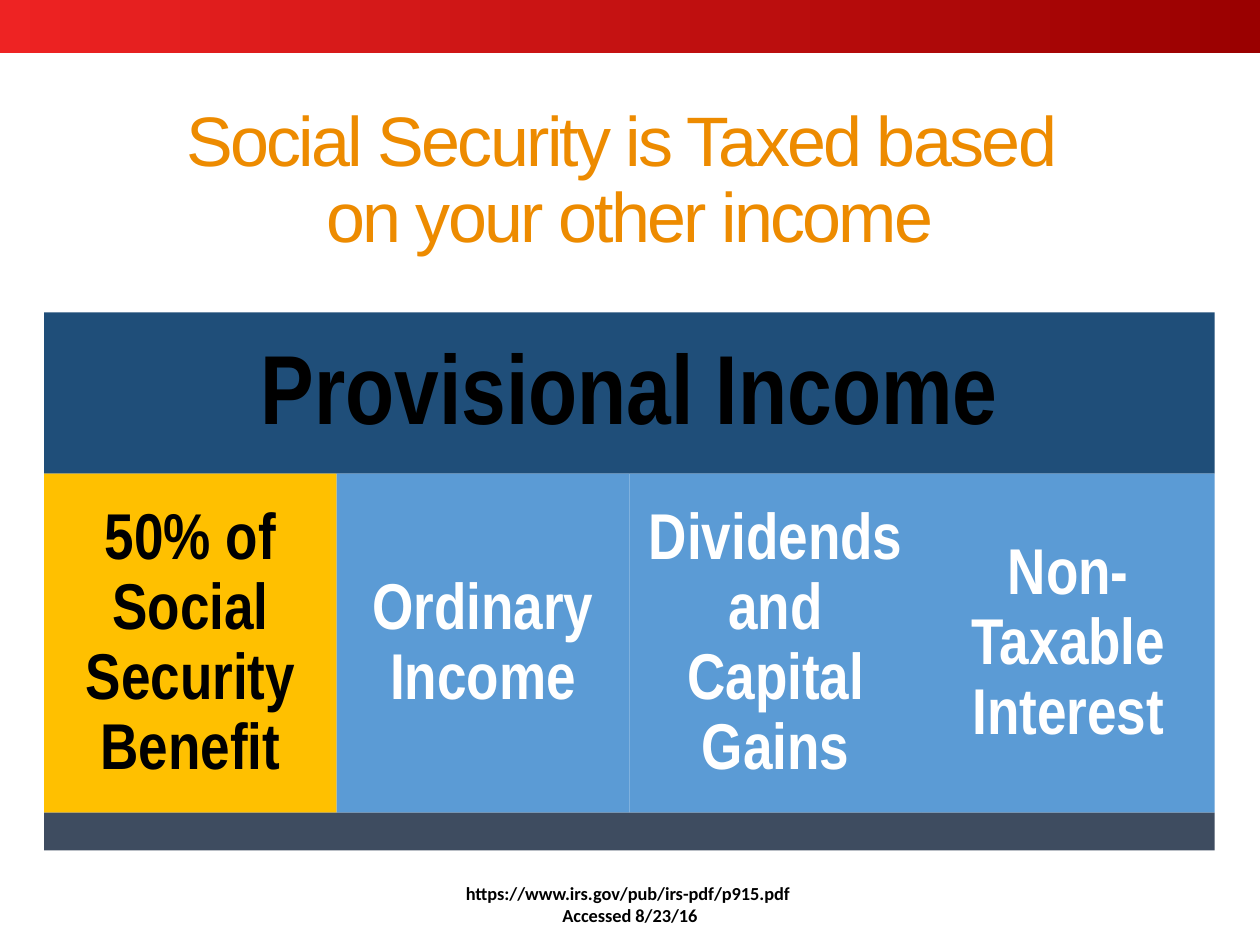
from dataclasses import dataclass

from pptx import Presentation
from pptx.dml.color import RGBColor
from pptx.enum.shapes import MSO_SHAPE
from pptx.enum.text import MSO_ANCHOR, PP_ALIGN
from pptx.util import Inches, Pt

ORANGE = RGBColor(0xED, 0x8B, 0x00)
RED = RGBColor(0xEE, 0x23, 0x23)
DARK_RED = RGBColor(0x9A, 0x00, 0x00)
NAVY = RGBColor(0x1F, 0x4E, 0x79)
GOLD = RGBColor(0xFF, 0xC0, 0x00)
BLUE = RGBColor(0x5B, 0x9B, 0xD5)
SLATE = RGBColor(0x3E, 0x4C, 0x60)
BLACK = RGBColor(0, 0, 0)
WHITE = RGBColor(0xFF, 0xFF, 0xFF)

LEFT, WIDTH = 0.35, 9.29
HEADER_TOP, COLUMN_TOP, FOOTER_TOP = 2.48, 3.76, 6.45
FOOTER_HEIGHT = 0.3


@dataclass
class Block:
    left: float
    top: float
    width: float
    height: float
    fill: RGBColor
    text: str = ""
    size: float = 37
    color: RGBColor = WHITE
    inset: float = 0.15


def format_text(frame, font: str, size: float, color: RGBColor, bold: bool,
                line_spacing: float = 1.0) -> None:
    for para in frame.paragraphs:
        para.alignment = PP_ALIGN.CENTER
        para.line_spacing = line_spacing
        for span in para.runs:
            span.font.name = font
            span.font.size = Pt(size)
            span.font.bold = bold
            span.font.color.rgb = color


def add_rectangle(page, left: float, top: float, width: float, height: float):
    box = page.shapes.add_shape(MSO_SHAPE.RECTANGLE, Inches(left), Inches(top),
                                Inches(width), Inches(height))
    box.shadow.inherit = False
    box.line.fill.background()
    return box


def draw_block(page, block: Block) -> None:
    box = add_rectangle(page, block.left, block.top, block.width, block.height)
    box.fill.solid()
    box.fill.fore_color.rgb = block.fill
    if not block.text:
        return
    frame = box.text_frame
    frame.word_wrap = True
    frame.vertical_anchor = MSO_ANCHOR.MIDDLE
    frame.margin_left = frame.margin_right = Inches(block.inset)
    frame.margin_top = frame.margin_bottom = Inches(block.inset)
    frame.text = block.text
    format_text(frame, "Arial Narrow", block.size, block.color, True, 0.9)


def draw_banner(page) -> None:
    banner = add_rectangle(page, 0, 0, 10, 0.42)
    banner.fill.gradient()
    banner.fill.gradient_angle = 0
    for stop, color in zip(banner.fill.gradient_stops, (RED, DARK_RED)):
        stop.color.rgb = color


def draw_title(page) -> None:
    title = page.shapes.title
    title.left, title.top = Inches(0), Inches(0.72)
    title.width, title.height = Inches(10), Inches(1.45)
    frame = title.text_frame
    frame.word_wrap = True
    frame.vertical_anchor = MSO_ANCHOR.MIDDLE
    frame.text = "Social Security is Taxed based \von your other income"
    format_text(frame, "Arial", 40, ORANGE, False, 0.9)
    # Tighten the letter spacing
    for span in frame.paragraphs[0].runs:
        span.font._element.set("spc", "-150")


def draw_source(page) -> None:
    box = page.shapes.add_textbox(Inches(0), Inches(6.95), Inches(10), Inches(0.45))
    frame = box.text_frame
    frame.word_wrap = True
    frame.text = "https://www.irs.gov/pub/irs-pdf/p915.pdf "
    frame.add_paragraph().text = "Accessed 8/23/16"
    format_text(frame, "Calibri", 10.5, BLACK, True)


def main() -> None:
    deck = Presentation()
    deck.slide_width, deck.slide_height = Inches(10), Inches(7.5)
    page = deck.slides.add_slide(deck.slide_layouts[5])

    draw_banner(page)
    draw_title(page)

    # Provisional income header
    draw_block(page, Block(LEFT, HEADER_TOP, WIDTH, COLUMN_TOP - HEADER_TOP, NAVY,
                           "Provisional Income", 56, BLACK, 0.23))

    # Income sources in equal columns
    sources = [
        ("50% of Social Security Benefit", GOLD, BLACK),
        ("Ordinary Income", BLUE, WHITE),
        ("Dividends and Capital Gains", BLUE, WHITE),
        ("Non-Taxable Interest", BLUE, WHITE),
    ]
    column = WIDTH / len(sources)
    for index, (text, fill, color) in enumerate(sources):
        draw_block(page, Block(LEFT + index * column, COLUMN_TOP, column,
                               FOOTER_TOP - COLUMN_TOP, fill, text, color=color))

    # Base strip and source note
    draw_block(page, Block(LEFT, FOOTER_TOP, WIDTH, FOOTER_HEIGHT, SLATE))
    draw_source(page)

    deck.save("out.pptx")


if __name__ == "__main__":
    main()
